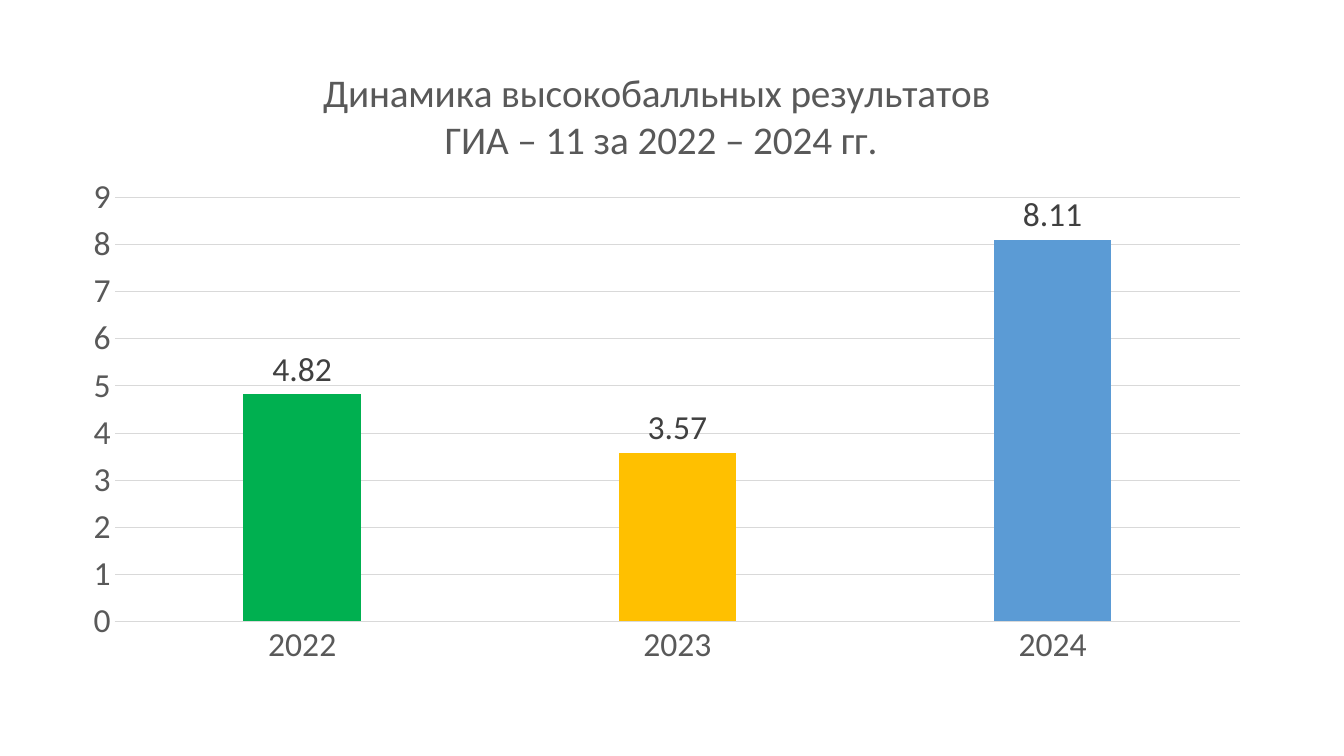
from dataclasses import dataclass

from lxml.etree import SubElement
from pptx import Presentation
from pptx.chart.data import CategoryChartData as ChartData
from pptx.dml.color import RGBColor
from pptx.enum.chart import XL_CHART_TYPE as ChartType
from pptx.enum.chart import XL_LABEL_POSITION as LabelPosition
from pptx.enum.chart import XL_TICK_MARK as TickMark
from pptx.oxml.ns import qn
from pptx.util import Pt

FONT = "Calibri"
COLORS = {
    "text": "595959",
    "label": "404040",
    "line": "D9D9D9",
    "green": "00B050",
    "yellow": "FFC000",
    "blue": "5B9BD5",
}
TITLE_LINES = ["Динамика высокобалльных результатов ", "ГИА – 11 за 2022 – 2024 гг."]


@dataclass
class YearResult:
    year: str
    value: float
    color: str


RESULTS = [
    YearResult("2022", 4.82, "green"),
    YearResult("2023", 3.57, "yellow"),
    YearResult("2024", 8.11, "blue"),
]


def rgb(name: str) -> RGBColor:
    return RGBColor.from_string(COLORS[name])


def style_font(font, size: float, color: str) -> None:
    font.name = FONT
    font.size = Pt(size)
    font.bold = False
    font.color.rgb = rgb(color)


def style_line(line) -> None:
    line.color.rgb = rgb("line")
    line.width = Pt(0.75)


def set_layout(parent, index: int, inner: bool = False, **fractions: float) -> None:
    """Place a chart part by fractions of the chart area."""
    for old_layout in parent.findall(qn("c:layout")):
        parent.remove(old_layout)
    layout = SubElement(parent, qn("c:layout"))
    parent.insert(index, layout)
    manual = SubElement(layout, qn("c:manualLayout"))
    settings = {"layoutTarget": "inner"} if inner else {}
    settings |= {"xMode": "edge", "yMode": "edge"}
    settings |= {key: str(value) for key, value in fractions.items()}
    for tag, value in settings.items():
        SubElement(manual, qn(f"c:{tag}")).set("val", value)


def add_results_chart(slide):
    data = ChartData()
    data.categories = [result.year for result in RESULTS]
    data.add_series("Series 1", [result.value for result in RESULTS])
    frame = slide.shapes.add_chart(
        ChartType.COLUMN_CLUSTERED, Pt(50.4), Pt(28.8), Pt(852.5), Pt(457.2), data
    )
    chart = frame.chart
    chart.has_legend = False
    style_font(chart.font, 24, "text")
    plot_area = chart.plots[0]._element.getparent()
    set_layout(plot_area, 0, inner=True, x=0.037, y=0.246, w=0.943, h=0.662)
    return chart


def style_title(chart) -> None:
    title = chart.chart_title
    text_frame = title.text_frame
    text_frame.text = "\n".join(TITLE_LINES)
    for paragraph in text_frame.paragraphs:
        style_font(paragraph.font, 28, "text")
        for run in paragraph.runs:
            style_font(run.font, 28, "text")
    set_layout(title._element, 1, x=0.209, y=0.039)


def style_axes(chart) -> None:
    for axis in (chart.category_axis, chart.value_axis):
        axis.major_tick_mark = axis.minor_tick_mark = TickMark.NONE
        style_font(axis.tick_labels.font, 24, "text")
    style_line(chart.category_axis.format.line)
    value_axis = chart.value_axis
    value_axis.minimum_scale, value_axis.maximum_scale = 0, 9
    value_axis.major_unit = 1
    value_axis.format.line.fill.background()
    style_line(value_axis.major_gridlines.format.line)


def style_columns(chart) -> None:
    plot = chart.plots[0]
    plot.vary_by_categories = False
    plot.gap_width = 219
    plot.overlap = -27
    series = plot.series[0]
    series.format.fill.solid()
    series.format.fill.fore_color.rgb = rgb("blue")
    for index, result in enumerate(RESULTS):
        fill = series.points[index].format.fill
        fill.solid()
        fill.fore_color.rgb = rgb(result.color)
    labels = series.data_labels
    labels.show_value = True
    labels.position = LabelPosition.OUTSIDE_END
    style_font(labels.font, 24, "label")


def main() -> None:
    presentation = Presentation()
    presentation.slide_width, presentation.slide_height = Pt(960), Pt(540)
    slide = presentation.slides.add_slide(presentation.slide_layouts[6])

    # Column chart of high-score results
    chart = add_results_chart(slide)
    style_title(chart)
    style_axes(chart)
    style_columns(chart)

    presentation.save("out.pptx")


if __name__ == "__main__":
    main()
